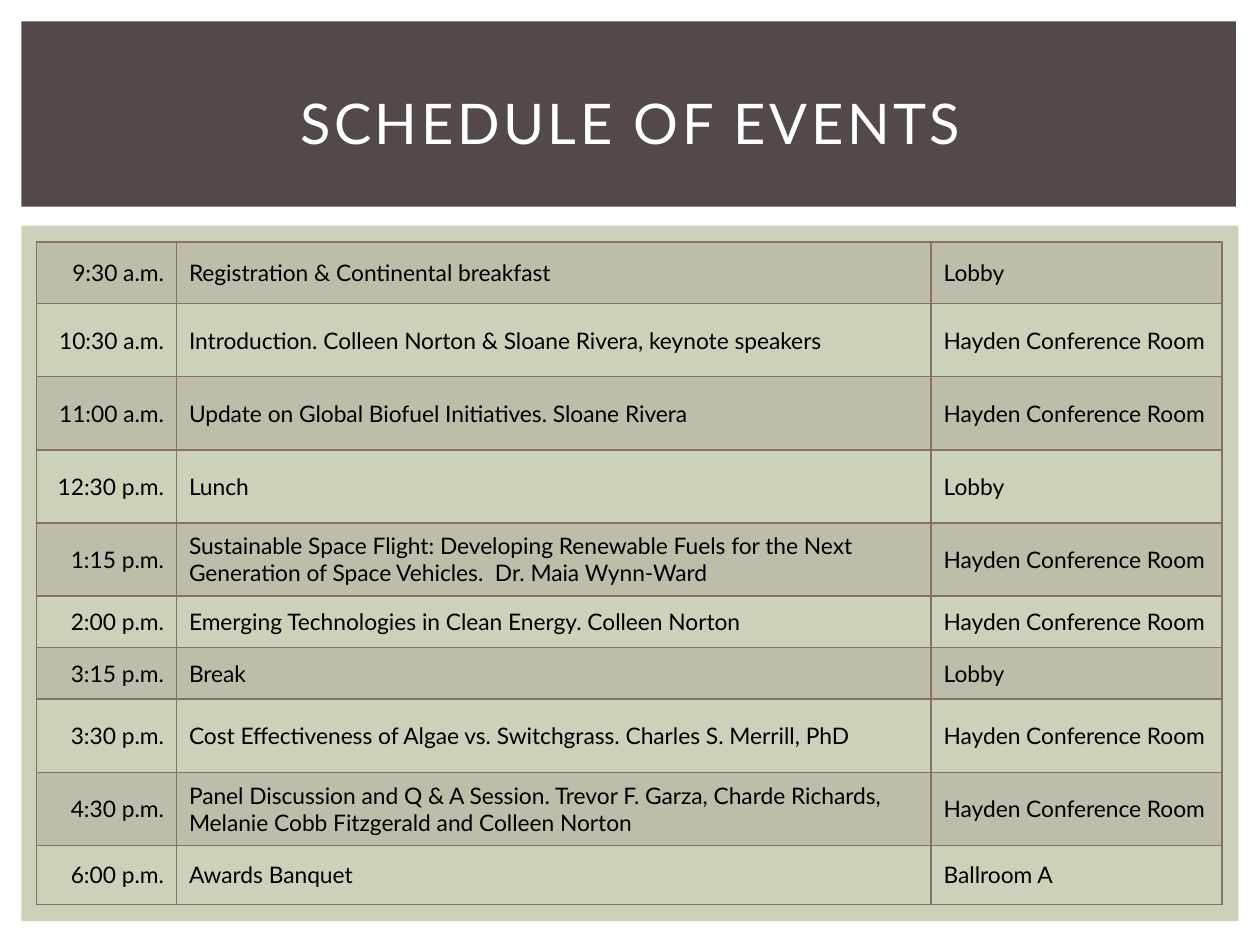
"""Build the schedule of events slide."""
from lxml.etree import SubElement as Sub
from pptx import Presentation
from pptx.dml.color import RGBColor as RGB
from pptx.enum.shapes import MSO_SHAPE as Shape
from pptx.enum.text import MSO_ANCHOR as Anchor, PP_ALIGN as Align
from pptx.oxml.ns import qn
from pptx.util import Inches, Pt

COLORS = {"panel": "CCD1B9", "band": "534949", "line": "87706B",
          "text": "000000", "title": "FFFFFF"}
HALL = "Hayden Conference Room"
EVENTS = [
    (0.49, "9:30 a.m.", "Registration & Continental breakfast", "Lobby"),
    (0.58, "10:30 a.m.", "Introduction. Colleen Norton & Sloane Rivera, keynote speakers", HALL),
    (0.58, "11:00 a.m.", "Update on Global Biofuel Initiatives. Sloane Rivera", HALL),
    (0.58, "12:30 p.m.", "Lunch", "Lobby"),
    (0.58, "1:15 p.m.", "Sustainable Space Flight: Developing Renewable Fuels for the Next "
     "Generation of Space Vehicles.  Dr. Maia Wynn-Ward", HALL),
    (0.41, "2:00 p.m.", "Emerging Technologies in Clean Energy. Colleen Norton", HALL),
    (0.41, "3:15 p.m.", "Break", "Lobby"),
    (0.58, "3:30 p.m.", "Cost Effectiveness of Algae vs. Switchgrass. Charles S. Merrill, PhD", HALL),
    (0.58, "4:30 p.m.", "Panel Discussion and Q & A Session. Trevor F. Garza, Charde Richards, "
     "Melanie Cobb Fitzgerald and Colleen Norton", HALL),
    (0.47, "6:00 p.m.", "Awards Banquet", "Ballroom A"),
]
WIDTHS = [1.11, 5.99, 2.31]


def style(para, size, color, align):
    para.alignment = align
    para.font.name = "Lato"
    para.font.size = Pt(size)
    para.font.color.rgb = RGB.from_string(COLORS[color])


def border(cell):
    props = cell._tc.get_or_add_tcPr()
    for side in ("a:lnL", "a:lnR", "a:lnT", "a:lnB"):
        line = Sub(props, qn(side), w=str(Pt(1)))
        fill = Sub(line, qn("a:solidFill"))
        Sub(fill, qn("a:srgbClr"), val=COLORS["line"])


deck = Presentation()
deck.slide_width, deck.slide_height = Inches(10), Inches(7.5)
slide = deck.slides.add_slide(deck.slide_layouts[6])

for color, *place in (("panel", 0.17, 1.79, 9.66, 5.52), ("band", 0.17, 0.17, 9.64, 1.47)):
    rect = slide.shapes.add_shape(Shape.RECTANGLE, *map(Inches, place))
    rect.shadow.inherit = False
    rect.fill.solid()
    rect.fill.fore_color.rgb = RGB.from_string(COLORS[color])
    rect.line.fill.background()

frame = slide.shapes.add_table(len(EVENTS), len(WIDTHS), *map(Inches, (0.29, 1.92, 9.42, 5.26)))
table = frame.table
table.first_row = table.horz_banding = False
for col, width in zip(table.columns, WIDTHS):
    col.width = Inches(width)
for i, (height, *texts) in enumerate(EVENTS):
    table.rows[i].height = Inches(height)
    for j, text in enumerate(texts):
        cell = table.cell(i, j)
        cell.text = text
        cell.vertical_anchor = Anchor.MIDDLE
        style(cell.text_frame.paragraphs[0], 13, "text", Align.LEFT if j else Align.RIGHT)
        border(cell)
        if i % 2:
            cell.fill.background()
        else:
            cell.fill.solid()
            cell.fill.fore_color.rgb = RGB.from_string(COLORS["line"])
            tint = cell._tc.tcPr.find(qn("a:solidFill")).find(qn("a:srgbClr"))
            Sub(tint, qn("a:alpha"), val="20000")

box = slide.shapes.add_textbox(*map(Inches, (0.42, 0.39, 9.17, 1.15)))
box.text_frame.word_wrap = True
box.text_frame.vertical_anchor = Anchor.MIDDLE
title = box.text_frame.paragraphs[0]
run = title.add_run()
run.text = "SCHEDULE OF EVENTS"
run._r.get_or_add_rPr().set("spc", "200")
style(title, 32, "title", Align.CENTER)

deck.save("out.pptx")
